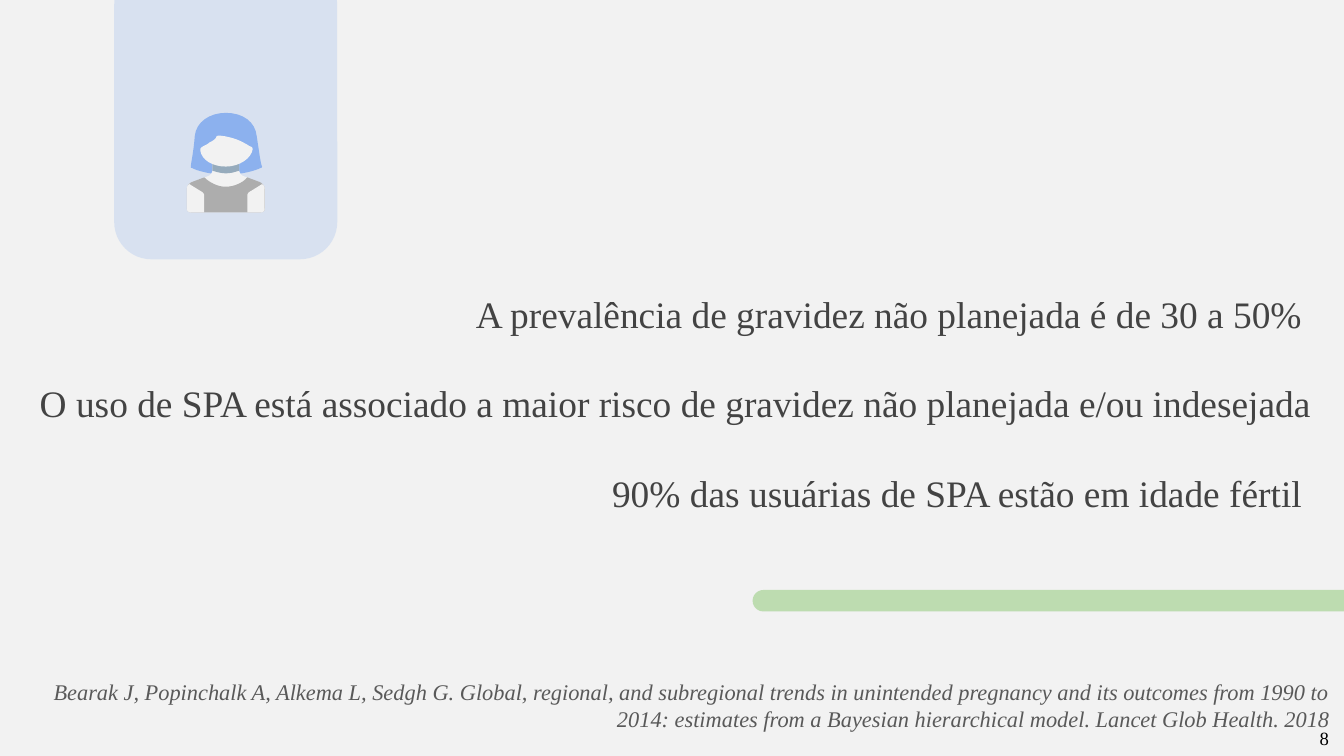
from dataclasses import dataclass

from lxml import etree
from pptx import Presentation, util as u
from pptx.dml.color import RGBColor
from pptx.enum import shapes, text
from pptx.oxml.ns import qn


@dataclass(frozen=True)
class Theme:
    font: str = "Times New Roman"
    paper: str = "F2F2F2"
    blue: str = "8CB1EE"
    green: str = "ABD59A"
    neck: str = "96ABBC"
    shirt: str = "9E9E9E"
    title: str = "434343"
    cite: str = "595959"
    number: str = "000000"
    title_size: int = 20
    title_pitch: int = 48
    cite_size: int = 12
    number_size: int = 10


T = Theme()
W = 10
H = W * 9 / 16

CLAIMS = [
    "A prevalência de gravidez não planejada é de 30 a 50% ",
    "O uso de SPA está associado a maior risco de gravidez não planejada e/ou indesejada",
    "90% das usuárias de SPA estão em idade fértil ",
]
CITATION = ("Bearak J, Popinchalk A, Alkema L, Sedgh G. Global, regional, and subregional "
            "trends in unintended pregnancy and its outcomes from 1990 to 2014: estimates "
            "from a Bayesian hierarchical model. Lancet Glob Health. 2018")

# Icon outlines on a grid of 58 columns by 74 rows
COLS, ROWS = 58, 74
HAIR = ("M 29 0 C 17 0 7 7 6 17 C 5 30 3 38 3 40 C 3 41 3 41 4 41 C 7 43 18 46 29 46 "
        "C 41 46 51 43 55 41 C 55 41 56 41 56 40 C 55 38 54 30 52 17 C 51 7 42 0 29 0")
SHOULDERS = ("L 5 51 C 2 52 0 54 0 57 L 0 71 C 0 73 1 74 3 74 L 55 74 "
             "C 57 74 58 73 58 71 L 58 57 C 58 54 56 52 53 51 ")
BODY = ("M 19 35 L 19 43 C 19 44 18 46 16 47 " + SHOULDERS
        + "L 42 47 C 40 46 39 44 39 43 L 39 35")
NECK = "M 19 35 L 19 43 C 22 44 26 45 29 45 C 33 45 36 44 39 43 L 39 35"
SHIRT = "M 13 48 " + SHOULDERS + "L 45 48 C 42 52 35 55 29 55 C 23 55 17 52 13 48"
FACE = ("M 25 17 C 23 17 22 17 22 18 C 21 20 19 21 17 22 C 16 23 14 24 12 25 "
        "C 10 26 10 27 10 28 C 11 35 19 40 29 40 C 39 40 48 34 49 27 "
        "C 49 26 48 25 47 25 C 41 21 34 18 25 17")
SLEEVE = ("M 56 53 L 48 58 C 46 59 45 60 45 62 L 45 74 L 55 74 "
          "C 57 74 58 73 58 71 L 58 57 C 58 56 58 54 56 53")


def paint(sp, color, opacity=100):
    sp.shadow.inherit = False
    sp.line.fill.background()
    sp.fill.solid()
    sp.fill.fore_color.rgb = RGBColor.from_string(color)
    if opacity < 100:
        clr = sp._element.spPr.find(f"{qn('a:solidFill')}/{qn('a:srgbClr')}")
        etree.SubElement(clr, qn("a:alpha")).set("val", str(opacity * 1000))


def outline(path, steps=8):
    """Turn M, L and C commands into points, sampling each cubic curve."""
    tokens = iter(path.split())
    points = []
    for command in tokens:
        n = 3 if command == "C" else 1
        ends = [(float(next(tokens)), float(next(tokens))) for _ in range(n)]
        if command != "C":
            points += ends
            continue
        curve = [points[-1]] + ends
        for k in range(1, steps + 1):
            t = k / steps
            weights = ((1 - t) ** 3, 3 * t * (1 - t) ** 2, 3 * t * t * (1 - t), t ** 3)
            points.append(tuple(sum(w * c[i] for w, c in zip(weights, curve))
                                for i in (0, 1)))
    return points


def rounded_bar(s, box, radius, color, opacity):
    sp = s.shapes.add_shape(shapes.MSO_SHAPE.ROUNDED_RECTANGLE, *map(u.Inches, box))
    sp.adjustments[0] = radius
    paint(sp, color, opacity)


def woman_icon(s, box):
    x, y, w, h = box
    group = s.shapes.add_group_shape()

    def draw(points, color, opacity=100):
        pts = [(u.Inches(x + px * w / COLS), u.Inches(y + py * h / ROWS))
               for px, py in points]
        builder = group.shapes.build_freeform(*pts[0], scale=1.0)
        builder.add_line_segments(pts[1:], close=True)
        paint(builder.convert_to_shape(), color, opacity)

    for path, color, opacity in ((HAIR, T.blue, 100), (BODY, T.paper, 100),
                                 (NECK, T.neck, 100), (SHIRT, T.shirt, 82),
                                 (FACE, T.paper, 100)):
        draw(outline(path), color, opacity)
    # The sleeves mirror each other
    sleeve = outline(SLEEVE)
    draw(sleeve, T.paper)
    draw([(COLS - px, py) for px, py in sleeve], T.paper)


def text_block(s, box, lines, font, color, align, anchor, pitch=None, inset=0.05):
    tf = s.shapes.add_textbox(*map(u.Inches, box)).text_frame
    frame = dict(word_wrap=True, vertical_anchor=anchor,
                 margin_top=u.Inches(inset), margin_bottom=u.Inches(inset))
    for name, value in frame.items():
        setattr(tf, name, value)
    for i, line in enumerate(lines):
        p = tf.paragraphs[0] if i == 0 else tf.add_paragraph()
        p.alignment = align
        if pitch:
            p.line_spacing = u.Pt(pitch)
        r = p.add_run()
        r.text = line
        for name, value in dict(font, name=T.font).items():
            setattr(r.font, name, value)
        r.font.color.rgb = RGBColor.from_string(color)


def claim_slide(prs):
    s = prs.slides.add_slide(prs.slide_layouts[6])
    s.background.fill.solid()
    s.background.fill.fore_color.rgb = RGBColor.from_string(T.paper)
    right, left = text.PP_ALIGN.RIGHT, text.PP_ALIGN.LEFT
    top, bottom = text.MSO_ANCHOR.TOP, text.MSO_ANCHOR.BOTTOM

    # Tab bleeding off the top, bar bleeding off the right
    rounded_bar(s, (0.85, -0.24, 1.66, 2.17), 0.167, T.blue, 25)
    rounded_bar(s, (0.56 * W, 4.39, 0.49 * W, 0.16), 0.5, T.green, 74)
    # Claims, stacked upwards from the bottom of their box
    text_block(s, (-0.14, 3.01, W, 0.92), CLAIMS, dict(size=u.Pt(T.title_size)),
               T.title, right, bottom, T.title_pitch, inset=0.1)
    # Icon on the tab
    woman_icon(s, (1.39, 0.84, 0.58, 0.74))
    # Citation and slide number
    text_block(s, (0, 5, W, 0.5), [CITATION],
               dict(size=u.Pt(T.cite_size), italic=True), T.cite, right, top)
    text_block(s, (9.72, 5.36, 0.56, 0.27), ["8"],
               dict(size=u.Pt(T.number_size)), T.number, left, top)


def main():
    prs = Presentation()
    prs.slide_width, prs.slide_height = u.Inches(W), u.Inches(H)
    claim_slide(prs)
    prs.save("out.pptx")


if __name__ == "__main__":
    main()
